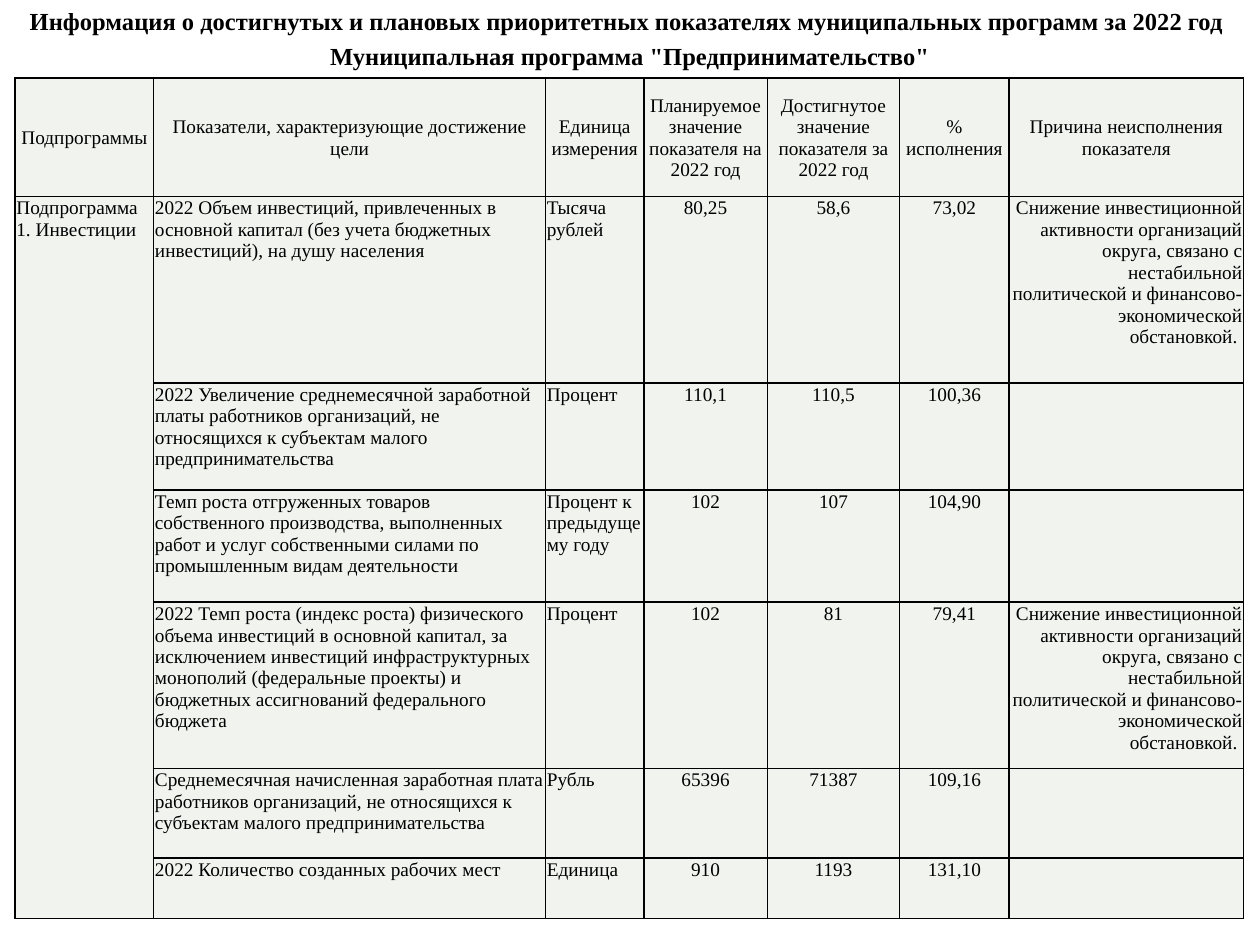
from lxml.etree import SubElement
from pptx import Presentation
from pptx.dml.color import RGBColor
from pptx.enum.text import MSO_ANCHOR, PP_ALIGN
from pptx.oxml.ns import qn
from pptx.util import Inches, Pt

BLACK = RGBColor(0x00, 0x00, 0x00)
CELL_FILL = RGBColor(0xF0, 0xF3, 0xEE)
FONT = "Times New Roman"

HEADINGS = [
    (0, "Информация о достигнутых и плановых приоритетных показателях муниципальных программ за 2022 год "),
    (0.28, 'Муниципальная программа "Предпринимательство"'),
]
DECLINE_REASON = (
    "Снижение инвестиционной активности организаций округа, связано с нестабильной "
    "политической и финансово-экономической обстановкой. "
)
HEADER = [
    "Подпрограммы",
    "Показатели, характеризующие достижение цели",
    "Единица измерения",
    "Планируемое значение показателя на 2022 год",
    "Достигнутое значение показателя за 2022 год",
    "% исполнения",
    "Причина неисполнения показателя",
]
SUBPROGRAM = "Подпрограмма 1. Инвестиции"
INDICATORS = [
    ("2022 Объем инвестиций, привлеченных в основной капитал (без учета бюджетных инвестиций), "
     "на душу населения",
     "Тысяча рублей", "80,25", "58,6", "73,02", DECLINE_REASON),
    ("2022 Увеличение среднемесячной заработной платы работников организаций, не относящихся "
     "к субъектам малого предпринимательства",
     "Процент", "110,1", "110,5", "100,36", ""),
    ("Темп роста отгруженных товаров собственного производства, выполненных работ и услуг "
     "собственными силами по промышленным видам деятельности",
     "Процент к предыдущему году", "102", "107", "104,90", ""),
    ("2022 Темп роста (индекс роста) физического объема инвестиций в основной капитал, "
     "за исключением инвестиций инфраструктурных монополий (федеральные проекты) и бюджетных "
     "ассигнований федерального бюджета",
     "Процент", "102", "81", "79,41", DECLINE_REASON),
    ("Среднемесячная начисленная заработная плата работников организаций, не относящихся "
     "к субъектам малого предпринимательства",
     "Рубль", "65396", "71387", "109,16", ""),
    ("2022 Количество созданных рабочих мест", "Единица", "910", "1193", "131,10", ""),
]
COLUMN_WIDTHS = [1.1, 3.11, 0.78, 0.98, 1.05, 0.87, 1.86]
ROW_HEIGHTS = [0.94, 1.48, 0.85, 0.89, 1.32, 0.71, 0.48]
COLUMN_ALIGNMENTS = [PP_ALIGN.LEFT] * 3 + [PP_ALIGN.CENTER] * 3 + [PP_ALIGN.RIGHT]


def style_paragraph(paragraph, size, alignment, bold=False):
    paragraph.alignment = alignment
    paragraph.font.name = FONT
    paragraph.font.size = Pt(size)
    paragraph.font.bold = bold
    paragraph.font.color.rgb = BLACK


def add_heading(slide, top, wording):
    heading = slide.shapes.add_textbox(0, Inches(top), Inches(10), Inches(0.34))
    heading.text_frame.word_wrap = True
    heading.text_frame.text = wording
    style_paragraph(heading.text_frame.paragraphs[0], 14, PP_ALIGN.CENTER, bold=True)


def add_borders(cell):
    properties = cell._tc.get_or_add_tcPr()
    for side in ("a:lnL", "a:lnR", "a:lnT", "a:lnB"):
        line = SubElement(properties, qn(side), w=str(Pt(1)))
        fill = SubElement(line, qn("a:solidFill"))
        SubElement(fill, qn("a:srgbClr"), val=str(BLACK))


def fill_cell(cell, wording, alignment, anchor):
    cell.text = wording
    cell.margin_left = cell.margin_right = cell.margin_top = Inches(0.01)
    cell.margin_bottom = 0
    cell.vertical_anchor = anchor
    style_paragraph(cell.text_frame.paragraphs[0], 11, alignment)
    add_borders(cell)
    cell.fill.solid()
    cell.fill.fore_color.rgb = CELL_FILL


def add_indicator_table(slide):
    rows = [HEADER] + [
        [SUBPROGRAM if number == 0 else "", *indicator]
        for number, indicator in enumerate(INDICATORS)
    ]
    table = slide.shapes.add_table(
        len(rows), len(HEADER), Inches(0.12), Inches(0.62),
        Inches(sum(COLUMN_WIDTHS)), Inches(sum(ROW_HEIGHTS)),
    ).table
    table.first_row = table.horz_banding = False
    for column, width in zip(table.columns, COLUMN_WIDTHS):
        column.width = Inches(width)
    for row, height in zip(table.rows, ROW_HEIGHTS):
        row.height = Inches(height)
    for r, wordings in enumerate(rows):
        for c, wording in enumerate(wordings):
            alignment = COLUMN_ALIGNMENTS[c] if r else PP_ALIGN.CENTER
            anchor = MSO_ANCHOR.TOP if r else MSO_ANCHOR.MIDDLE
            fill_cell(table.cell(r, c), wording, alignment, anchor)
    table.cell(1, 0).merge(table.cell(len(INDICATORS), 0))


def main():
    presentation = Presentation()
    presentation.slide_width = Inches(10)
    presentation.slide_height = Inches(7.5)
    slide = presentation.slides.add_slide(presentation.slide_layouts[6])
    for top, wording in HEADINGS:
        add_heading(slide, top, wording)
    add_indicator_table(slide)
    presentation.save("out.pptx")


if __name__ == "__main__":
    main()
